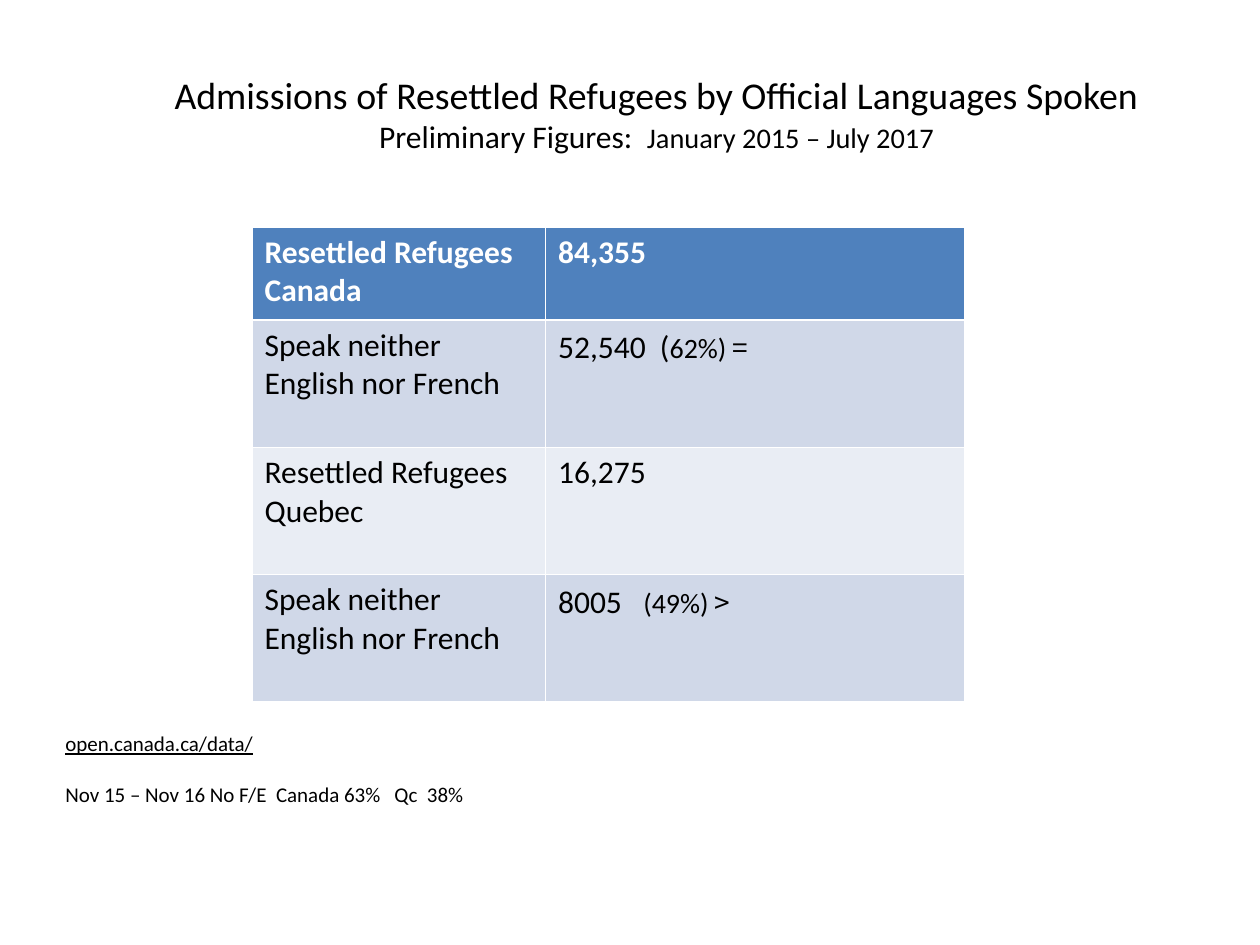
from pptx import Presentation
from pptx import util as u
from pptx.dml.color import RGBColor
from pptx.enum import text

BODY_FONT = "Calibri"
SYMBOL_FONT = "Noto Sans CJK JP"
BLACK, WHITE = "000000", "FFFFFF"

# Each row: label, runs of the figure as (words, size, font), fill
HEADER_FILL, DARK_BAND, LIGHT_BAND = "4F81BD", "D0D8E8", "E9EDF4"
ROWS = [
    ("Resettled Refugees Canada", [("84,355", 18, BODY_FONT)], HEADER_FILL),
    ("Speak neither English nor French",
     [("52,540  (", 18, BODY_FONT), ("62%) ", 16, BODY_FONT),
      ("=", 16, SYMBOL_FONT)], DARK_BAND),
    ("Resettled Refugees Quebec", [("16,275", 18, BODY_FONT)], LIGHT_BAND),
    ("Speak neither English nor French",
     [("8005   ", 18, BODY_FONT), ("(49%) ", 16, BODY_FONT),
      (">", 16, SYMBOL_FONT)], DARK_BAND),
]


def rgb(value):
    return RGBColor.from_string(value)


def write(paragraph, runs, color=BLACK, bold=False):
    """Fill a paragraph with (words, size, font) runs."""
    paragraph.font.color.rgb = rgb(color)
    paragraph.font.bold = bold
    for words, size, font in runs:
        run = paragraph.add_run()
        run.text = words
        run.font.size = u.Pt(size)
        run.font.name = font
        run.font.color.rgb = rgb(color)
        run.font.bold = bold


def add_text(slide, left, top, width, height, lines):
    """Add a wrapping text box with one paragraph per list of runs."""
    box = slide.shapes.add_textbox(*map(u.Inches, (left, top, width, height)))
    frame = box.text_frame
    frame.word_wrap = True
    for index, runs in enumerate(lines):
        paragraph = frame.add_paragraph() if index else frame.paragraphs[0]
        write(paragraph, runs)
    return frame


def add_title(slide):
    frame = add_text(slide, 0.92, 0.42, 8.58, 1.08, [
        [("Admissions of Resettled Refugees by Official Languages Spoken",
          21.6, BODY_FONT)],
        [("Preliminary Figures:  ", 18, BODY_FONT),
         ("January 2015 – July 2017", 16.2, BODY_FONT)],
    ])
    frame.vertical_anchor = text.MSO_ANCHOR.MIDDLE
    frame.margin_bottom = u.Inches(0.17)
    for paragraph in frame.paragraphs:
        paragraph.alignment = text.PP_ALIGN.CENTER


def add_language_table(slide):
    frame = slide.shapes.add_table(
        len(ROWS), 2, u.Inches(2), u.Inches(1.8), u.Inches(5.66), u.Inches(3.77))
    table = frame.table
    for column, width in zip(table.columns, (2.33, 3.33)):
        column.width = u.Inches(width)
    for index, (label, figure, fill) in enumerate(ROWS):
        is_header = index == 0
        table.rows[index].height = u.Inches(0.74 if is_header else 1.01)
        for column, runs in enumerate(([(label, 18, BODY_FONT)], figure)):
            cell = table.cell(index, column)
            cell.fill.solid()
            cell.fill.fore_color.rgb = rgb(fill)
            write(cell.text_frame.paragraphs[0], runs,
                  WHITE if is_header else BLACK, is_header)


def add_source_note(slide):
    frame = add_text(slide, 0.42, 5.75, 5.08, 0.71, [
        [("open.canada.ca/data/", 12, BODY_FONT)],
        [("Nov 15 – Nov 16 No F/E  Canada 63%   Qc  38%", 12, BODY_FONT)],
    ])
    address, comparison = frame.paragraphs
    address.runs[0].font.underline = True
    comparison.space_before = u.Pt(14.5)


def main():
    deck = Presentation()
    deck.slide_width, deck.slide_height = u.Inches(10), u.Inches(7.5)
    slide = deck.slides.add_slide(deck.slide_layouts[6])
    add_title(slide)
    add_language_table(slide)
    add_source_note(slide)
    deck.save("out.pptx")


if __name__ == "__main__":
    main()
